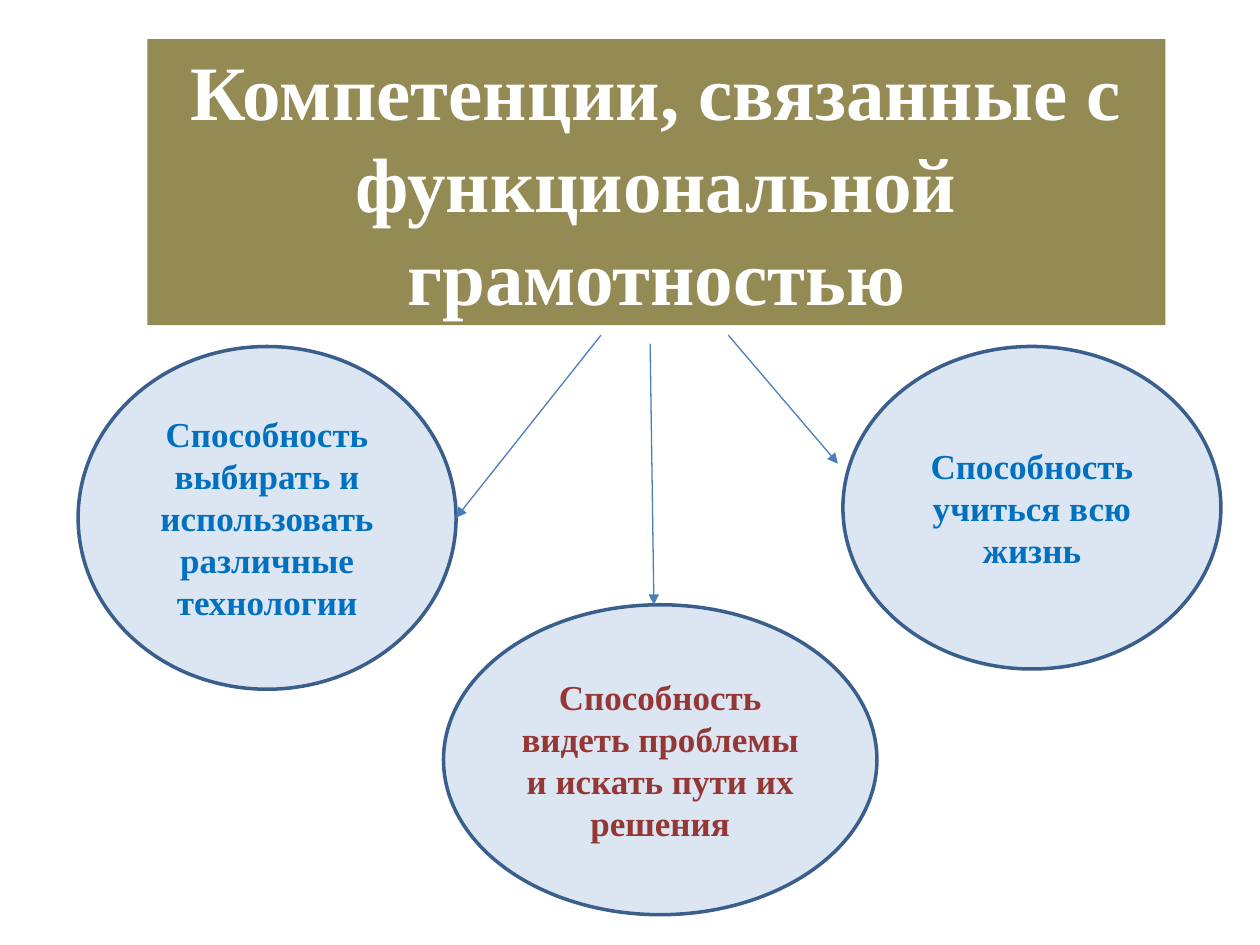
from pptx import Presentation
from pptx.dml.color import RGBColor
from pptx.enum.shapes import MSO_CONNECTOR as Connector, MSO_SHAPE as Shape
from pptx.enum.text import MSO_ANCHOR as Anchor, MSO_AUTO_SIZE as AutoSize, PP_ALIGN as Align
from pptx.oxml.ns import qn
from pptx.util import Pt
from lxml.etree import SubElement

PALE_BLUE, OUTLINE, ARROW = "DCE6F2", "3A5F8C", "4B7EBC"
OLIVE, WHITE, BLUE, RED = "948A54", "FFFFFF", "0070C0", "953735"

TITLE = "Компетенции, связанные с функциональной грамотностью"
ABILITIES = [
    ("Cпособность выбирать и использовать различные технологии", BLUE, (44.64, 198, 216, 195.84)),
    ("Cпособность видеть проблемы и искать пути их решения", RED, (253.44, 345.6, 247.68, 177.12)),
    ("Cпособность учиться всю жизнь", BLUE, (481.68, 198, 216, 184.32)),
]
ARROWS = [
    (343.44, 191.52, 260.64, 295.92),
    (416.16, 191.52, 478.8, 264.96),
    (371.52, 196.56, 373.68, 345.6),
]


def set_all(target, values):
    for attribute, value in values.items():
        setattr(target, attribute, value)


def paint(fill, color):
    fill.solid()
    fill.fore_color.rgb = RGBColor.from_string(color)


def write(holder, text, size, color):
    frame = holder.text_frame
    set_all(frame, {"text": text, "word_wrap": True, "auto_size": AutoSize.NONE,
                    "vertical_anchor": Anchor.MIDDLE})
    paragraph = frame.paragraphs[0]
    paragraph.alignment = Align.CENTER
    font = paragraph.runs[0].font
    set_all(font, {"name": "Times New Roman", "size": Pt(size), "bold": True})
    paint(font.fill, color)


def format_title(title):
    set_all(title, {"left": Pt(84.24), "top": Pt(22.32), "width": Pt(581.76), "height": Pt(163.44)})
    paint(title.fill, OLIVE)
    write(title, TITLE, 44, WHITE)


def add_ability(slide, text, color, box):
    ability = slide.shapes.add_shape(Shape.OVAL, *map(Pt, box))
    ability.shadow.inherit = False
    paint(ability.fill, PALE_BLUE)
    paint(ability.line.fill, OUTLINE)
    ability.line.width = Pt(2)
    write(ability, text, 20, color)


def add_arrow(slide, ends):
    arrow = slide.shapes.add_connector(Connector.STRAIGHT, *map(Pt, ends))
    paint(arrow.line.fill, ARROW)
    arrow.line.width = Pt(0.75)
    SubElement(arrow.line._get_or_add_ln(), qn("a:tailEnd"), type="triangle")
    SubElement(arrow._element.spPr, qn("a:effectLst"))


def main():
    deck = Presentation()
    set_all(deck, {"slide_width": Pt(720), "slide_height": Pt(540)})
    slide = deck.slides.add_slide(deck.slide_layouts[5])
    format_title(slide.shapes.title)
    for text, color, box in ABILITIES:
        add_ability(slide, text, color, box)
    for ends in ARROWS:
        add_arrow(slide, ends)
    deck.save("out.pptx")


if __name__ == "__main__":
    main()
